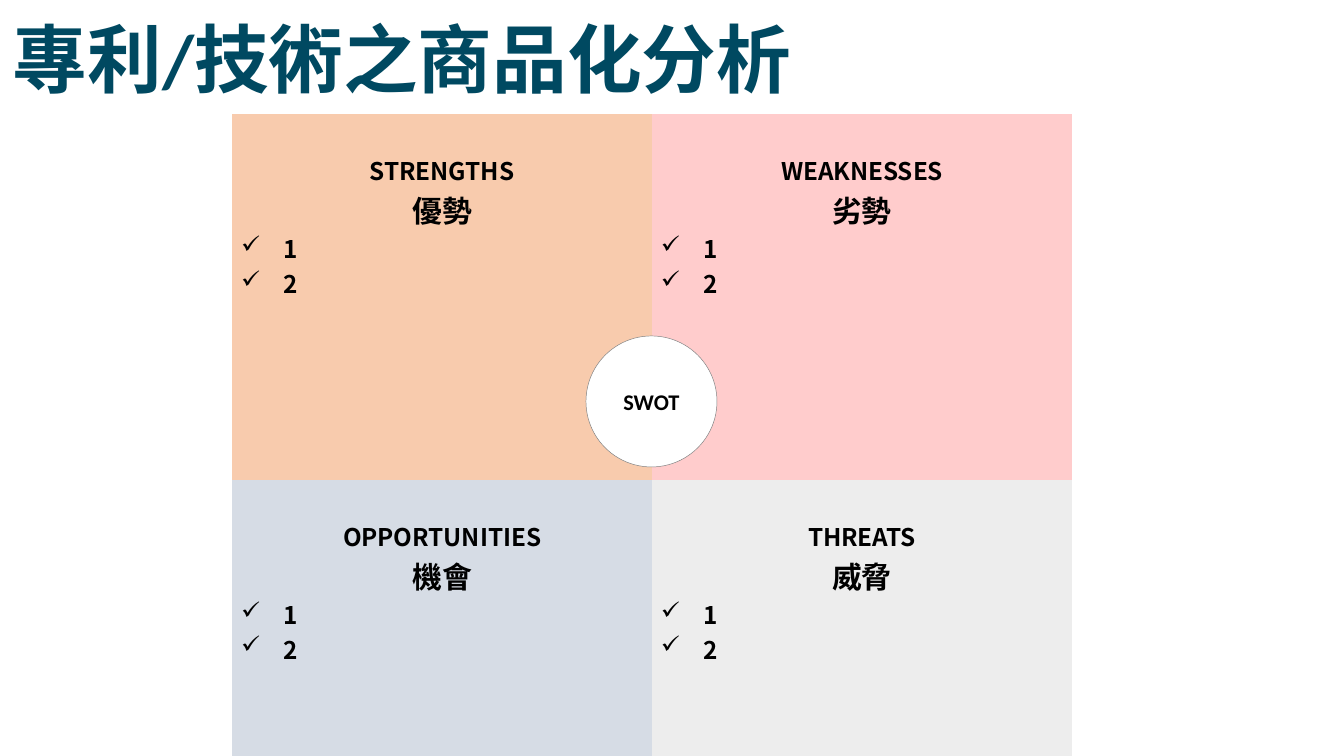
from lxml.etree import SubElement
from pptx import Presentation
from pptx.dml.color import RGBColor
from pptx.enum.shapes import MSO_SHAPE as Shape
from pptx.enum.text import MSO_ANCHOR as Anchor, PP_ALIGN as Align
from pptx.oxml.ns import qn
from pptx.util import Emu, Pt

SCALE = 9144000 / 1344
LATIN, CJK = "Calibri", "Noto Sans CJK SC"
BLACK = "000000"

# Heading, Chinese heading and fill, row by row
QUADRANTS = [
    [("STRENGTHS", "優勢", "F8CBAD"), ("WEAKNESSES", "劣勢", "FFCCCC")],
    [("OPPORTUNITIES", "機會", "D6DCE5"), ("THREATS", "威脅", "EDEDED")],
]
POINTS = ["1", "2"]
ROW_HEIGHTS = [366, 276]


def px(length):
    return Emu(round(length * SCALE))


def box(left, top, width, height):
    return px(left), px(top), px(width), px(height)


def color(value):
    return RGBColor.from_string(value)


def fill(part, value):
    part.fill.solid()
    part.fill.fore_color.rgb = color(value)


def set_margins(part, side, top, bottom):
    part.margin_left = part.margin_right = px(side)
    part.margin_top, part.margin_bottom = px(top), px(bottom)


def add_run(paragraph, text, size, font=CJK, ink=BLACK):
    run = paragraph.add_run()
    run.text = text
    run.font.name, run.font.size, run.font.bold = font, Pt(size), True
    run.font.color.rgb = color(ink)
    SubElement(run.font._element, qn("a:ea")).set("typeface", CJK)


def add_check(paragraph, indent):
    properties = paragraph._p.get_or_add_pPr()
    properties.set("marL", str(px(indent)))
    properties.set("indent", str(-px(indent)))
    SubElement(properties, qn("a:buChar")).set("char", "✓")


def add_title(slide, left, top, width, height):
    frame = slide.shapes.add_textbox(*box(left, top, width, height)).text_frame
    frame.word_wrap = True
    frame.vertical_anchor = Anchor.MIDDLE
    set_margins(frame, 13, 6, 6)
    heading = frame.paragraphs[0]
    heading.line_spacing = 0.9
    add_run(heading, "專利/技術之商品化分析", 40, LATIN, "004961")


def fill_quadrant(cell, english, chinese, background):
    fill(cell, background)
    set_margins(cell, 9, 39, 4)
    frame = cell.text_frame
    # Two centred headings
    heading = frame.paragraphs[0]
    heading.alignment = Align.CENTER
    add_run(heading, english, 13)
    subheading = frame.add_paragraph()
    subheading.alignment = Align.CENTER
    add_run(subheading, chinese, 16)
    # Checked points
    for text in POINTS:
        point = frame.add_paragraph()
        add_check(point, 42)
        add_run(point, text, 13)


def add_matrix(slide, left, top, width):
    frame = slide.shapes.add_table(2, 2, *box(left, top, width, sum(ROW_HEIGHTS)))
    matrix = frame.table
    for column in matrix.columns:
        column.width = px(width / 2)
    for r, (height, quadrants) in enumerate(zip(ROW_HEIGHTS, QUADRANTS)):
        matrix.rows[r].height = px(height)
        for c, quadrant in enumerate(quadrants):
            cell = matrix.cell(r, c)
            fill_quadrant(cell, *quadrant)
            # No cell borders; they precede the fill in the schema
            for i, side in enumerate(("a:lnL", "a:lnR", "a:lnT", "a:lnB")):
                properties = cell._tc.get_or_add_tcPr()
                border = properties.makeelement(qn(side), {"w": "0"})
                SubElement(border, qn("a:noFill"))
                properties.insert(i, border)


def add_hub(slide, left, top, width, height):
    hub = slide.shapes.add_shape(Shape.OVAL, *box(left, top, width, height))
    hub.shadow.inherit = False
    fill(hub, "FFFFFF")
    hub.line.color.rgb = color("7F7F7F")
    hub.line.width = Pt(0.25)
    frame = hub.text_frame
    frame.vertical_anchor = Anchor.MIDDLE
    label = frame.paragraphs[0]
    label.alignment = Align.CENTER
    add_run(label, "SWOT", 12, LATIN)


def main():
    deck = Presentation()
    deck.slide_width, deck.slide_height = px(1344), px(756)
    slide = deck.slides.add_slide(deck.slide_layouts[6])
    add_title(slide, 0, 12, 961, 102)
    add_matrix(slide, 232, 114, 840)
    add_hub(slide, 586, 336, 131, 131)
    deck.save("out.pptx")


if __name__ == "__main__":
    main()
